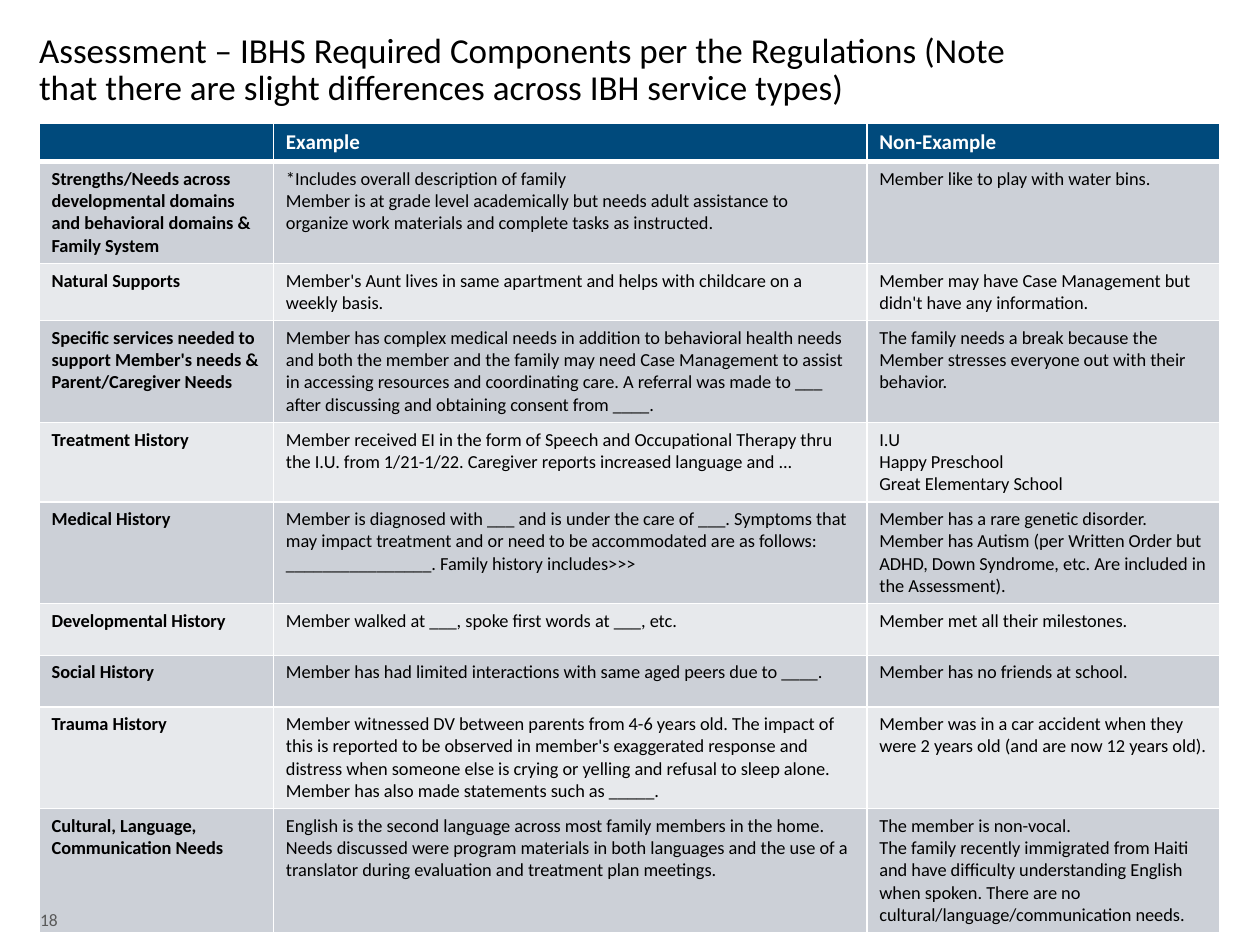
import pptx
import pptx.util
import pptx.dml.color
import pptx.enum.text
import pptx.oxml
import pptx.oxml.ns

Inches = pptx.util.Inches
Pt = pptx.util.Pt
RGB = pptx.dml.color.RGBColor
Align = pptx.enum.text.PP_ALIGN
Anchor = pptx.enum.text.MSO_ANCHOR

NAVY = RGB(0x00, 0x4A, 0x7C)
DARK = RGB(0xCC, 0xD0, 0xD7)
LIGHT = RGB(0xE7, 0xE9, 0xEC)
WHITE = RGB(0xFF, 0xFF, 0xFF)
BLACK = RGB(0x00, 0x00, 0x00)
GREY = RGB(0x59, 0x59, 0x59)

TITLE = (
    "Assessment – IBHS Required Components per the Regulations "
    "(Note that there are slight differences across IBH service types)"
)
COLS = [1.86, 4.71, 2.8]
HEAD = 0.3
BODY = 0.41

# A line break in a cell starts a new paragraph
ROWS = [
    ("", "Example", "Non-Example"),
    ("Strengths/Needs across developmental domains and behavioral domains "
     "& Family System",
     "*Includes overall description of family\n"
     "Member is at grade level academically but needs adult assistance to "
     "organize work materials and complete tasks as instructed.",
     "Member like to play with water bins."),
    ("Natural Supports",
     "Member's Aunt lives in same apartment and helps with childcare on a "
     "weekly basis.",
     "Member may have Case Management but didn't have any information."),
    ("Specific services needed to support Member's needs & "
     "Parent/Caregiver Needs",
     "Member has complex medical needs in addition to behavioral health "
     "needs and both the member and the family may need Case Management to "
     "assist in accessing resources and coordinating care. A referral was "
     "made to ___ after discussing and obtaining consent from ____.",
     "The family needs a break because the Member stresses everyone out "
     "with their behavior."),
    ("Treatment History",
     "Member received EI in the form of Speech and Occupational Therapy "
     "thru the I.U. from 1/21-1/22. Caregiver reports increased language "
     "and ...",
     "I.U\nHappy Preschool\nGreat Elementary School"),
    ("Medical History",
     "Member is diagnosed with ___ and is under the care of ___. Symptoms "
     "that may impact treatment and or need to be accommodated are as "
     "follows: ________________. Family history includes>>>",
     "Member has a rare genetic disorder.\n"
     "Member has Autism (per Written Order but ADHD, Down Syndrome, etc. "
     "Are included in the Assessment)."),
    ("Developmental History",
     "Member walked at ___, spoke first words at ___, etc.",
     "Member met all their milestones."),
    ("Social History",
     "Member has had limited interactions with same aged peers due to ____.",
     "Member has no friends at school."),
    ("Trauma History",
     "Member witnessed DV between parents from 4-6 years old. The impact of "
     "this is reported to be observed in member's exaggerated response and "
     "distress when someone else is crying or yelling and refusal to sleep "
     "alone. Member has also made statements such as _____.",
     "Member was in a car accident when they were 2 years old (and are now "
     "12 years old)."),
    ("Cultural, Language, Communication Needs",
     "English is the second language across most family members in the "
     "home. Needs discussed were program materials in both languages and "
     "the use of a translator during evaluation and treatment plan "
     "meetings.",
     "The member is non-vocal.\n"
     "The family recently immigrated from Haiti and have difficulty "
     "understanding English when spoken. There are no "
     "cultural/language/communication needs."),
]


class Deck:
    """Holds the style and the current slide."""

    face = "Calibri"

    def __init__(self, wide, high):
        self.prs = pptx.Presentation()
        self.prs.slide_width = Inches(wide)
        self.prs.slide_height = Inches(high)
        self.slide = self.prs.slides.add_slide(self.prs.slide_layouts[5])

    def fill_text(self, frame, text, size, color, bold=False):
        frame.text = text
        for para in frame.paragraphs:
            para.alignment = Align.LEFT
            font = para.font
            font.name, font.size, font.bold = self.face, Pt(size), bold
            font.color.rgb = color

    def title(self, text, left, top, wide, high):
        shape = self.slide.shapes.title
        shape.left, shape.top = Inches(left), Inches(top)
        shape.width, shape.height = Inches(wide), Inches(high)
        frame = shape.text_frame
        frame.word_wrap = True
        frame.auto_size = pptx.enum.text.MSO_AUTO_SIZE.NONE
        frame.vertical_anchor = Anchor.TOP
        self.fill_text(frame, text, 20, BLACK)
        frame.paragraphs[0].line_spacing = 0.9

    def label(self, text, left, top, wide, high):
        box = self.slide.shapes.add_textbox(
            Inches(left), Inches(top), Inches(wide), Inches(high))
        frame = box.text_frame
        frame.word_wrap = True
        frame.vertical_anchor = Anchor.BOTTOM
        self.fill_text(frame, text, 10, GREY)

    def border(self, cell, above, below):
        props = cell._tc.get_or_add_tcPr()
        widths = {"L": 1, "R": 1, "T": above, "B": below}
        for spot, (side, width) in enumerate(widths.items()):
            props.insert(spot, pptx.oxml.parse_xml(
                f'<a:ln{side} {pptx.oxml.ns.nsdecls("a")} w="{Pt(width)}">'
                f'<a:solidFill><a:srgbClr val="{WHITE}"/></a:solidFill>'
                f'</a:ln{side}>'))

    def table(self, rows, cols, left, top):
        high = HEAD + BODY * (len(rows) - 1)
        grid = self.slide.shapes.add_table(
            len(rows), len(cols), Inches(left), Inches(top),
            Inches(sum(cols)), Inches(high)).table
        for col, wide in zip(grid.columns, cols):
            col.width = Inches(wide)
        for r, row in enumerate(rows):
            head = r == 0
            grid.rows[r].height = Inches(HEAD if head else BODY)
            fill = NAVY if head else DARK if r % 2 else LIGHT
            for c, text in enumerate(row):
                cell = grid.cell(r, c)
                cell.fill.solid()
                cell.fill.fore_color.rgb = fill
                self.fill_text(cell.text_frame, text, 12 if head else 10.5,
                               WHITE if head else BLACK, head or c == 0)
                # A thick rule parts the header from the body
                self.border(cell, 3 if r == 1 else 1, 3 if head else 1)

    def save(self):
        self.prs.save("out.pptx")


def main():
    deck = Deck(10, 7.5)
    # Heading
    deck.title(TITLE, 0.21, 0.21, 8.27, 1.24)
    # Examples for each component
    deck.table(ROWS, COLS, 0.31, 0.98)
    # Page number
    deck.label("18", 0.22, 7.03, 0.44, 0.4)
    deck.save()


if __name__ == "__main__":
    main()
